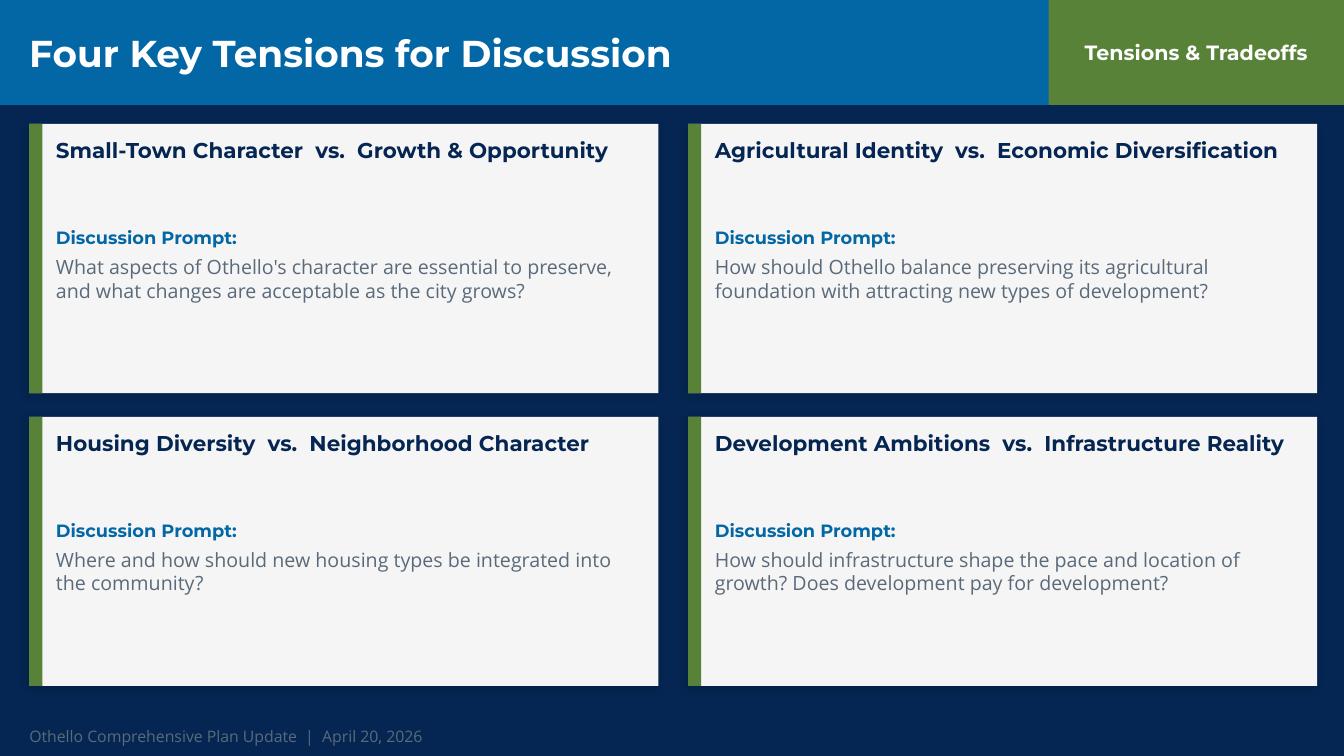
from lxml import etree
from pptx import Presentation
from pptx.dml.color import RGBColor
from pptx.enum.shapes import MSO_SHAPE
from pptx.enum.text import MSO_ANCHOR, PP_ALIGN
from pptx.oxml.ns import qn
from pptx.util import Inches, Pt

RECT = MSO_SHAPE.RECTANGLE
TOP, MIDDLE = MSO_ANCHOR.TOP, MSO_ANCHOR.MIDDLE
LEFT, CENTER = PP_ALIGN.LEFT, PP_ALIGN.CENTER

NAVY = RGBColor(0x05, 0x26, 0x52)
BLUE = RGBColor(0x03, 0x67, 0xA5)
GREEN = RGBColor(0x57, 0x82, 0x38)
PALE = RGBColor(0xF5, 0xF5, 0xF5)
GREY = RGBColor(0x5A, 0x6A, 0x7A)
WHITE = RGBColor(0xFF, 0xFF, 0xFF)

HEADING, BODY = "Montserrat", "Open Sans"

SLIDE_W, SLIDE_H = 13.33, 7.5
HEADER_H, TAG_W = 1.04, 2.93
MARGIN, CARD_TOP = 0.29, 1.23
CARD_W, CARD_H = 6.24, 2.67
COL_STEP, ROW_STEP = 6.535, 2.905
BAR_W, TEXT_INSET, TEXT_W = 0.13, 0.265, 5.84

TENSIONS = [
    ("Small-Town Character  vs.  Growth & Opportunity",
     "What aspects of Othello's character are essential to preserve, "
     "and what changes are acceptable as the city grows?"),
    ("Agricultural Identity  vs.  Economic Diversification",
     "How should Othello balance preserving its agricultural foundation "
     "with attracting new types of development?"),
    ("Housing Diversity  vs.  Neighborhood Character",
     "Where and how should new housing types be integrated into the community?"),
    ("Development Ambitions  vs.  Infrastructure Reality",
     "How should infrastructure shape the pace and location of growth? "
     "Does development pay for development?"),
]


class Deck:
    def __init__(self):
        self.prs = Presentation()
        self.prs.slide_width = Inches(SLIDE_W)
        self.prs.slide_height = Inches(SLIDE_H)
        self.slide = self.prs.slides.add_slide(self.prs.slide_layouts[6])
        fill = self.slide.background.fill
        fill.solid()
        fill.fore_color.rgb = NAVY

    def rect(self, x, y, w, h, color):
        sp = self.slide.shapes.add_shape(RECT, Inches(x), Inches(y), Inches(w), Inches(h))
        sp.shadow.inherit = False
        sp.fill.solid()
        sp.fill.fore_color.rgb = color
        sp.line.fill.background()
        return sp

    def shadow(self, sp):
        effects = sp._element.spPr.find(qn("a:effectLst"))
        outer = etree.SubElement(effects, qn("a:outerShdw"), blurRad=str(Pt(6)),
                                 dist=str(Pt(2)), dir=str(135 * 60000),
                                 algn="bl", rotWithShape="0")
        color = etree.SubElement(outer, qn("a:srgbClr"), val="000000")
        etree.SubElement(color, qn("a:alpha"), val="13000")

    def text(self, text, x, y, w, h, *, size, color, font=HEADING, bold=True,
             anchor=MIDDLE, align=LEFT):
        sp = self.slide.shapes.add_textbox(Inches(x), Inches(y), Inches(w), Inches(h))
        tf = sp.text_frame
        tf.word_wrap = True
        tf.vertical_anchor = anchor
        tf.margin_left = tf.margin_right = tf.margin_top = tf.margin_bottom = 0
        p = tf.paragraphs[0]
        p.alignment = align
        r = p.add_run()
        r.text = text
        r.font.name = font
        r.font.size = Pt(size)
        r.font.bold = bold
        r.font.color.rgb = color

    def card(self, x, y, tension, prompt):
        self.shadow(self.rect(x, y, CARD_W, CARD_H, PALE))
        self.rect(x, y, BAR_W, CARD_H, GREEN)
        left = x + TEXT_INSET
        self.text(tension, left, y + 0.13, TEXT_W, 0.75, size=15.3, color=NAVY, anchor=TOP)
        self.text("Discussion Prompt:", left, y + 0.98, TEXT_W, 0.29, size=12.7, color=BLUE)
        self.text(prompt, left, y + 1.3, TEXT_W, 1.2, size=14, color=GREY,
                  font=BODY, bold=False, anchor=TOP)


def main():
    deck = Deck()
    tag_x = SLIDE_W - TAG_W
    deck.rect(0, 0, SLIDE_W, HEADER_H, BLUE)
    deck.text("Four Key Tensions for Discussion", MARGIN, 0, 10, HEADER_H,
              size=26.7, color=WHITE)
    deck.rect(tag_x, 0, TAG_W, HEADER_H, GREEN)
    deck.text("Tensions & Tradeoffs", tag_x, 0, TAG_W, HEADER_H,
              size=14.7, color=WHITE, align=CENTER)
    deck.text("Othello Comprehensive Plan Update  |  April 20, 2026",
              MARGIN, 7.17, 12.75, 0.27, size=11.3, color=GREY, font=BODY, bold=False)
    for i, (tension, prompt) in enumerate(TENSIONS):
        row, col = divmod(i, 2)
        deck.card(MARGIN + col * COL_STEP, CARD_TOP + row * ROW_STEP, tension, prompt)
    deck.prs.save("out.pptx")


if __name__ == "__main__":
    main()
